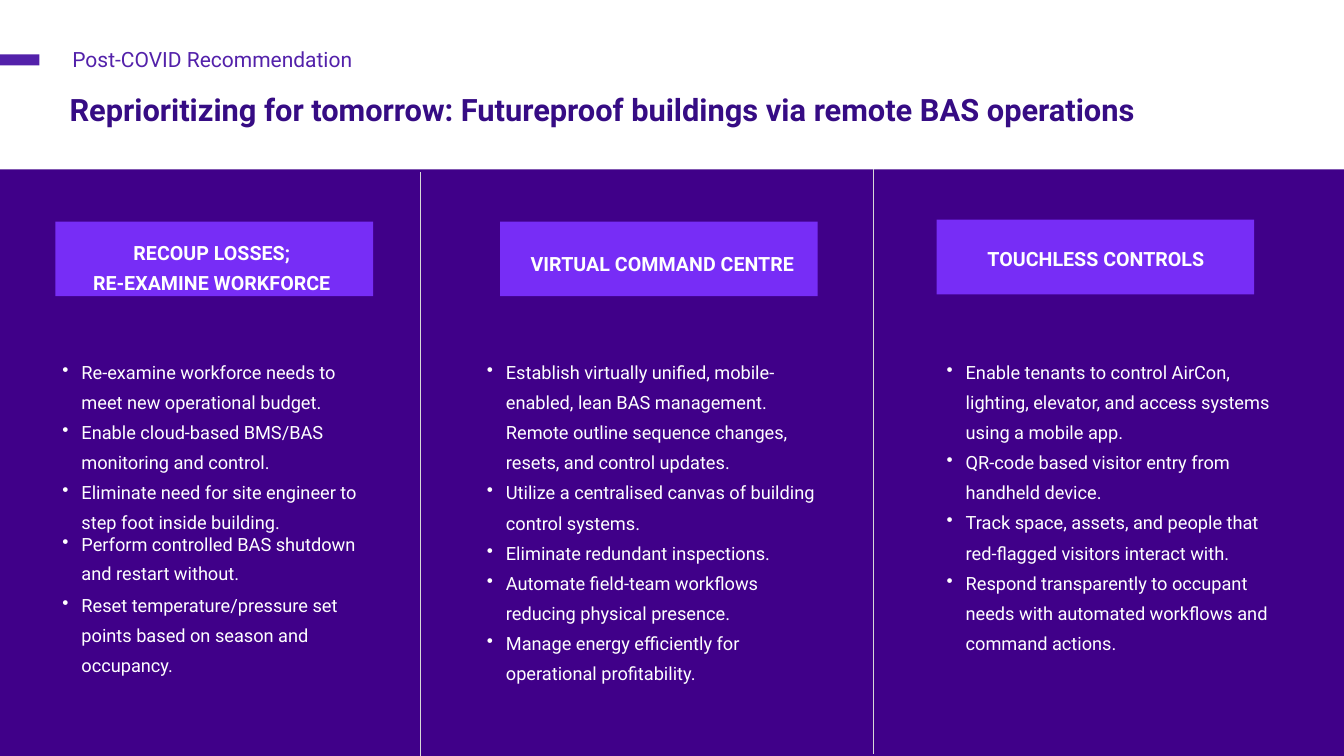
import pptx
import pptx.util
import pptx.dml.color
import pptx.enum.shapes
import pptx.enum.text
import pptx.oxml.ns
import lxml.etree

WIDE, HIGH = 13.33, 7.5
FONT = "Roboto"
WHITE, BAND, TILE = "FFFFFF", "400089", "772DF6"
NAVY, PURPLE, GREY = "360C84", "5321AA", "D8D8D8"

TITLE = "Reprioritizing for tomorrow: Futureproof buildings via remote BAS operations"
TOPIC = "Post-COVID Recommendation"
TIGHT = "Perform controlled BAS shutdown and restart without."

# Places are percent of slide width and height: left, top, width, height.
COLUMNS = [
    {
        "tile": (4.13, 29.33, 23.63, 9.87),
        "head": (2.93, 30.27, 25.66, 8),
        "body": (3.9, 46, 24.83, 38.27),
        "name": ["RECOUP LOSSES;", "RE-EXAMINE WORKFORCE"],
        "points": [
            "Re-examine workforce needs to meet new operational budget.",
            "Enable cloud-based BMS/BAS monitoring and control.",
            "Eliminate need for site engineer to step foot inside building.",
            TIGHT,
            "Reset temperature/pressure set points based on season and occupancy.",
        ],
    },
    {
        "tile": (37.21, 29.33, 23.63, 9.87),
        "head": (36.46, 31.73, 25.66, 4.67),
        "body": (35.48, 46, 27.01, 41.6),
        "name": ["VIRTUAL COMMAND CENTRE"],
        "points": [
            "Establish virtually unified, mobile-enabled, lean BAS management. "
            "Remote outline sequence changes, resets, and control updates.",
            "Utilize a centralised canvas of building control systems.",
            "Eliminate redundant inspections.",
            "Automate field-team workflows reducing physical presence.",
            "Manage energy efficiently for operational profitability.",
        ],
    },
    {
        "tile": (69.69, 29.07, 23.63, 9.87),
        "head": (68.72, 31.07, 25.66, 4.67),
        "body": (69.69, 46, 25.96, 38.27),
        "name": ["TOUCHLESS CONTROLS"],
        "points": [
            "Enable tenants to control AirCon, lighting, elevator, and access "
            "systems using a mobile app.",
            "QR-code based visitor entry from handheld device.",
            "Track space, assets, and people that red-flagged visitors interact with.",
            "Respond transparently to occupant needs with automated workflows "
            "and command actions.",
        ],
    },
]
RULES = [(31.28, 22.8, 100), (64.97, 22.4, 99.73)]


def color(code):
    return pptx.dml.color.RGBColor.from_string(code)


def place(left, top, width, height):
    across = pptx.util.Inches(WIDE) / 100
    down = pptx.util.Inches(HIGH) / 100
    return [round(n) for n in (left * across, top * down, width * across, height * down)]


def block(slide, spot, fill):
    shape = slide.shapes.add_shape(pptx.enum.shapes.MSO_SHAPE.RECTANGLE, *place(*spot))
    shape.shadow.inherit = False
    shape.fill.solid()
    shape.fill.fore_color.rgb = color(fill)
    shape.line.fill.background()


def rule(slide, left, top, end):
    x, y, _, drop = place(left, top, 0, end - top)
    line = slide.shapes.add_connector(pptx.enum.shapes.MSO_CONNECTOR.STRAIGHT, x, y, x, y + drop)
    line.line.color.rgb = color(GREY)
    line.line.width = pptx.util.Pt(0.75)
    props = line._element.spPr
    lxml.etree.SubElement(props, pptx.oxml.ns.qn("a:effectLst"))


def bullet(para):
    props = para._p.get_or_add_pPr()
    inset = pptx.util.Inches(0.19)
    props.set("marL", str(inset))
    props.set("indent", str(-inset))
    tint = lxml.etree.SubElement(props, pptx.oxml.ns.qn("a:buClr"))
    lxml.etree.SubElement(tint, pptx.oxml.ns.qn("a:srgbClr"), val=WHITE)
    lxml.etree.SubElement(props, pptx.oxml.ns.qn("a:buChar"), char="•")


def write(shape, lines, size, ink, bold=False, align="LEFT", space=1.0, dots=False):
    frame = shape.text_frame
    frame.text = "\n".join(lines)
    frame.word_wrap = True
    frame.auto_size = pptx.enum.text.MSO_AUTO_SIZE.NONE
    frame.vertical_anchor = pptx.enum.text.MSO_ANCHOR.TOP
    for para in frame.paragraphs:
        if dots:
            bullet(para)
        para.alignment = getattr(pptx.enum.text.PP_ALIGN, align)
        para.line_spacing = 1.0 if para.text == TIGHT else space
        para.space_before = pptx.util.Pt(0)
        for run in para.runs:
            run.font.name = FONT
            run.font.size = pptx.util.Pt(size)
            run.font.bold = bold
            run.font.color.rgb = color(ink)
        if para.text == TIGHT:
            tail = para.add_run()
            tail.text = " "
            tail.font.name = "Calibri"
            tail.font.size = pptx.util.Pt(18)


def label(slide, spot, *args, **style):
    write(slide.shapes.add_textbox(*place(*spot)), *args, **style)


def main():
    deck = pptx.Presentation()
    deck.slide_width = pptx.util.Inches(WIDE)
    deck.slide_height = pptx.util.Inches(HIGH)
    slide = deck.slides.add_slide(deck.slide_layouts[5])

    title = slide.shapes.title
    title.left, title.top, title.width, title.height = place(4.43, 11.33, 95.57, 6.27)
    write(title, [TITLE], 22, NAVY, bold=True)
    label(slide, (4.65, 5.47, 29.41, 4.67), [TOPIC], 15, PURPLE)

    block(slide, (0, 7.2, 2.93, 1.47), PURPLE)
    block(slide, (0, 22.4, 100, 77.6), BAND)
    for spot in RULES:
        rule(slide, *spot)
    for col in COLUMNS:
        block(slide, col["tile"], TILE)
        label(slide, col["head"], col["name"], 14, WHITE, bold=True, align="CENTER", space=1.29)
        label(slide, col["body"], col["points"], 13, WHITE, space=1.38, dots=True)
    deck.save("out.pptx")


if __name__ == "__main__":
    main()
